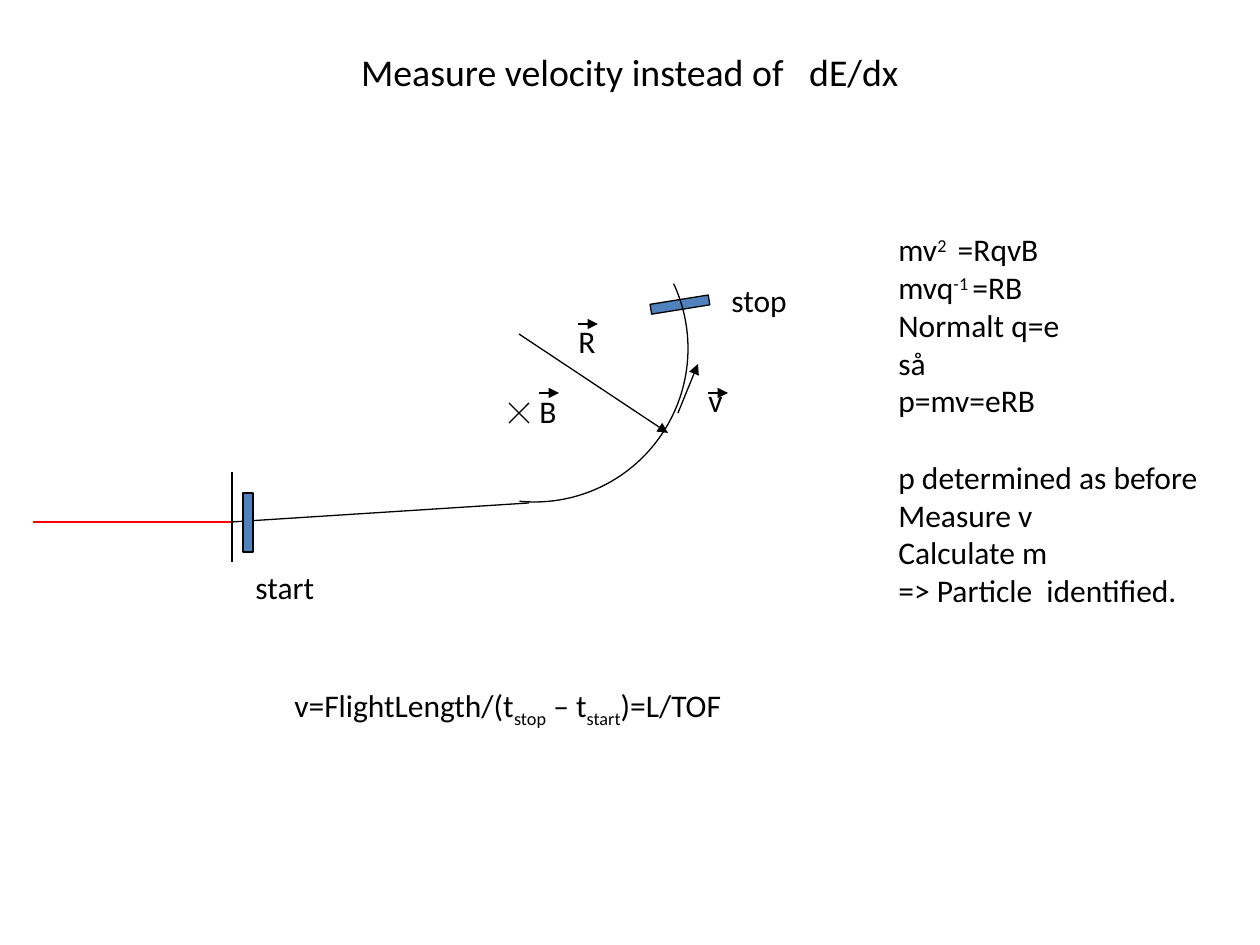
from lxml import etree
from pptx import Presentation
from pptx import util as u
from pptx.dml.color import RGBColor
from pptx.enum import shapes, text
from pptx.oxml.ns import qn

SCALE = 914400 / 126
BLACK = RGBColor(0, 0, 0)
RED = RGBColor(255, 0, 0)
BLUE = RGBColor(0x4F, 0x81, 0xBD)
FONT = "Calibri"
SUP, SUB = 30000, -25000
LINE = u.Pt(0.75)
GAP = u.Pt(22)

RULES = [
    [("mv", 0), ("2 ", SUP), (" =RqvB", 0)],
    [("mvq", 0), ("-1 ", SUP), ("=RB", 0)],
    [("Normalt q=e", 0)],
    [("så", 0)],
    [("p=mv=eRB", 0)],
]
STEPS = [
    [("p determined as before", 0)],
    [("Measure v", 0)],
    [("Calculate m", 0)],
    [("=> Particle  identified.", 0)],
]
SPEED = [("v=FlightLength/(t", 0), ("stop", SUB), (" – t", 0),
         ("start", SUB), (")=L/TOF", 0)]


def px(*nums):
    return [u.Emu(round(n * SCALE)) for n in nums]


def style(item, form):
    for key, val in form.items():
        setattr(item, key, val)


def write(para, runs, size=18):
    """Fill a paragraph with (words, baseline) runs."""
    for words, base in runs:
        run = para.add_run()
        run.text = words
        style(run.font, {"name": FONT, "size": u.Pt(size)})
        run.font.color.rgb = BLACK
        if base:
            run.font._element.set("baseline", str(base))


def label(slide, box, rows, wrap=False):
    frame = slide.shapes.add_textbox(*px(*box)).text_frame
    style(frame, {"word_wrap": wrap,
                  "auto_size": text.MSO_AUTO_SIZE.SHAPE_TO_FIT_TEXT})
    for num, runs in enumerate(rows):
        para = frame.add_paragraph() if num else frame.paragraphs[0]
        write(para, runs)
    return frame


def line(slide, ends, color=BLACK, arrow=False):
    link = slide.shapes.add_connector(shapes.MSO_CONNECTOR.STRAIGHT, *px(*ends))
    link.line.width = LINE
    link.line.color.rgb = color
    if arrow:
        tail = etree.SubElement(link.line._get_or_add_ln(), qn("a:tailEnd"))
        tail.set("type", "triangle")
    etree.SubElement(link._element.spPr, qn("a:effectLst"))


def outline(slide, kind, box):
    shape = slide.shapes.add_shape(kind, *px(*box))
    shape.shadow.inherit = False
    shape.line.width = LINE
    shape.line.color.rgb = BLACK
    return shape


def counter(slide, left, top, turn=0):
    """Draw a scintillator bar."""
    bar = outline(slide, shapes.MSO_SHAPE.RECTANGLE, (left, top, 10, 59))
    bar.fill.solid()
    bar.fill.fore_color.rgb = BLUE
    bar.rotation = turn


def curve(slide, box, start, end):
    """Draw an arc between two angles in degrees, clockwise from the right."""
    arc = outline(slide, shapes.MSO_SHAPE.ARC, box)
    arc.fill.background()
    for num, angle in enumerate((start, end)):
        arc.adjustments[num] = angle * 0.6


def vector(slide, name, left, top, width, mark):
    """Write a letter with a short arrow above it."""
    label(slide, (left, top, width, 50), [[(name, 0)]])
    line(slide, (left + 12, mark, left + 32, mark), arrow=True)


def title(slide, words):
    head = slide.shapes.title
    box = px(63, 38, 1134, 158)
    style(head, dict(zip(("left", "top", "width", "height"), box)))
    frame = head.text_frame
    style(frame, {"vertical_anchor": text.MSO_ANCHOR.TOP,
                  "auto_size": text.MSO_AUTO_SIZE.NONE,
                  "margin_top": px(11)[0]})
    frame.paragraphs[0].alignment = text.PP_ALIGN.CENTER
    write(frame.paragraphs[0], [(words, 0)], 21.6)


def track(slide):
    line(slide, (33, 522, 232, 522), RED)
    line(slide, (232, 472, 232, 562))
    line(slide, (232, 522, 529, 503))
    counter(slide, 675, 275, 260.9)
    curve(slide, (381, 195, 307, 307), 335, 95.6)
    counter(slide, 243, 493)
    label(slide, (719, 275, 84, 50), [[("stop", 0)]])
    label(slide, (243, 562, 87, 50), [[("start", 0)]])


def field(slide):
    line(slide, (519, 334, 668, 433), arrow=True)
    line(slide, (678, 413, 698, 364), arrow=True)
    line(slide, (529, 403, 509, 423))
    line(slide, (509, 403, 529, 423))
    vector(slide, "R", 566, 316, 48, 324)
    vector(slide, "B", 527, 386, 47, 393)
    vector(slide, "v", 696, 375, 42, 393)


def main():
    deck = Presentation()
    deck.slide_width, deck.slide_height = px(1260, 945)
    slide = deck.slides.add_slide(deck.slide_layouts[5])
    title(slide, "Measure velocity instead of   dE/dx")
    track(slide)
    field(slide)
    notes = label(slide, (886, 224, 329, 394), RULES + STEPS)
    notes.paragraphs[len(RULES)].space_before = GAP
    label(slide, (282, 680, 538, 50), [SPEED], True)
    deck.save("out.pptx")


if __name__ == "__main__":
    main()
